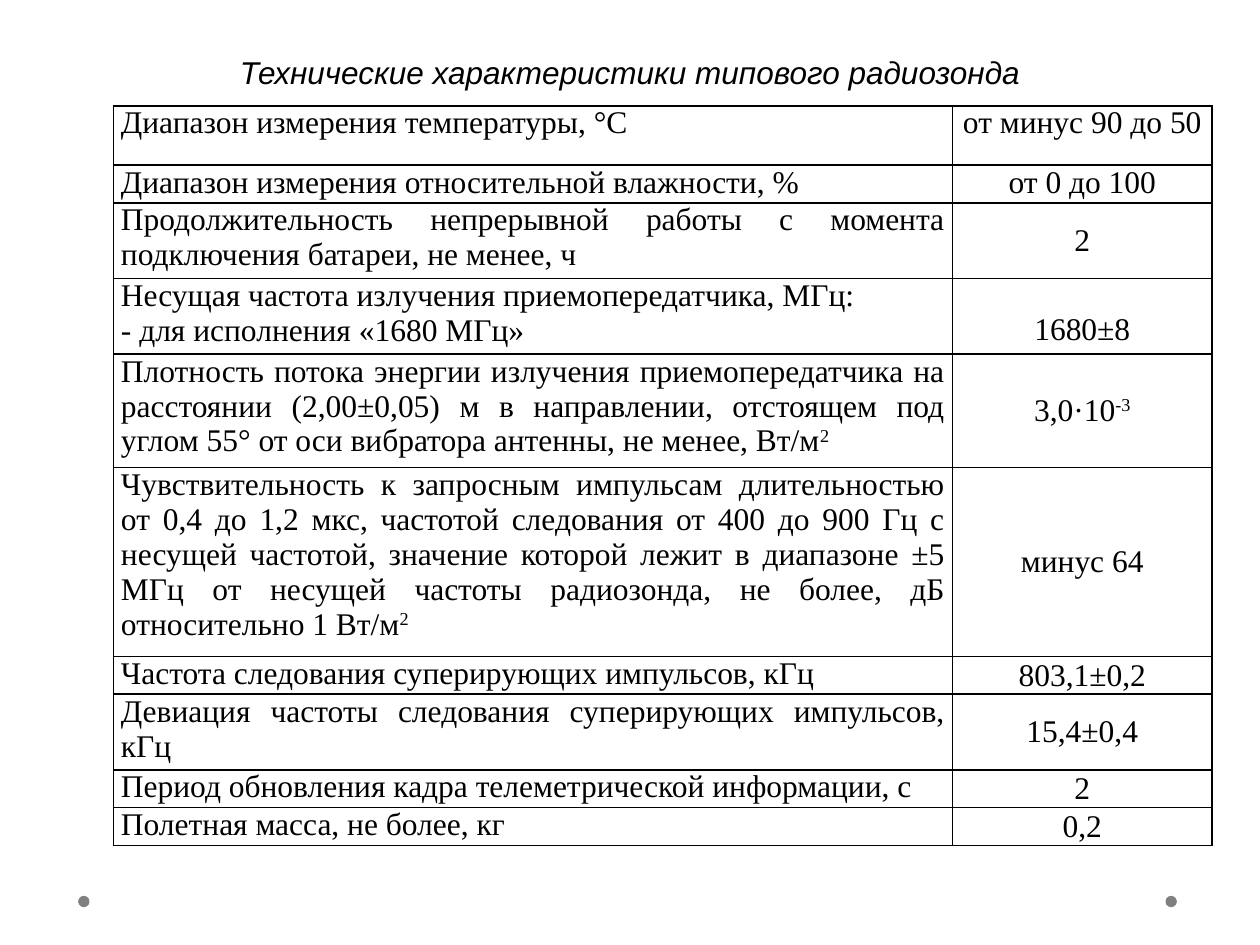
"""Build a slide with the technical characteristics of a radiosonde."""
from dataclasses import dataclass

from lxml.etree import SubElement
from pptx import Presentation
from pptx.dml.color import RGBColor
from pptx.enum.shapes import MSO_SHAPE
from pptx.enum.text import MSO_ANCHOR, PP_ALIGN
from pptx.oxml.ns import qn
from pptx.util import Inches, Pt


@dataclass(frozen=True)
class Theme:
    """Colours, fonts and sizes of the slide."""
    text: str = "000000"
    border: str = "000000"
    dot: str = "808080"
    title_font: str = "Arial"
    table_font: str = "Times New Roman"
    size: int = 18
    border_width: int = 1


class SlideBuilder:
    """Hold the theme and the current slide."""

    def __init__(self, prs, theme):
        self.theme = theme
        self.s = prs.slides.add_slide(prs.slide_layouts[5])

    def style(self, r, name, italic=False):
        """Format one run."""
        r.font.name = name
        r.font.size = Pt(self.theme.size)
        r.font.italic = italic
        r.font.color.rgb = RGBColor.from_string(self.theme.text)

    def title(self, text, x, y, w, h):
        """Place the slide title."""
        sp = self.s.shapes.title
        sp.left, sp.top, sp.width, sp.height = map(Inches, (x, y, w, h))
        tf = sp.text_frame
        tf.text = text
        tf.vertical_anchor = MSO_ANCHOR.TOP
        p = tf.paragraphs[0]
        p.alignment = PP_ALIGN.CENTER
        self.style(p.runs[0], self.theme.title_font, italic=True)

    def dot(self, x, y, d):
        """Draw a small round mark."""
        sp = self.s.shapes.add_shape(MSO_SHAPE.OVAL, *map(Inches, (x, y, d, d)))
        sp.shadow.inherit = False
        sp.fill.solid()
        sp.fill.fore_color.rgb = RGBColor.from_string(self.theme.dot)
        sp.line.fill.background()

    def borders(self, cell):
        """Draw all four cell borders."""
        tcPr = cell._tc.get_or_add_tcPr()
        for side in ("a:lnL", "a:lnR", "a:lnT", "a:lnB"):
            ln = SubElement(tcPr, qn(side), w=str(Pt(self.theme.border_width)))
            fill = SubElement(ln, qn("a:solidFill"))
            SubElement(fill, qn("a:srgbClr"), val=self.theme.border)

    def cell(self, cell, text, align, anchor):
        """Fill one cell; a caret starts a superscript."""
        cell.margin_left = cell.margin_right = Inches(0.06)
        cell.margin_top = cell.margin_bottom = 0
        cell.vertical_anchor = anchor
        if anchor == MSO_ANCHOR.BOTTOM:
            cell.margin_bottom = Inches(0.05)
        self.borders(cell)
        cell.fill.background()
        tf = cell.text_frame
        tf.text = text.replace("^", "")
        for p, line in zip(tf.paragraphs, text.split("\n")):
            p.alignment = align
            base, _, power = line.partition("^")
            p.runs[0].text = base
            if power:
                r = p.add_run()
                r.text = power
                r._r.get_or_add_rPr().set("baseline", "30000")
            for r in p.runs:
                self.style(r, self.theme.table_font)

    def table(self, rows, widths, x, y):
        """Add the table of characteristics and values."""
        height = sum(row[0] for row in rows)
        tbl = self.s.shapes.add_table(
            len(rows), len(widths),
            *map(Inches, (x, y, sum(widths), height))).table
        tbl.first_row = tbl.horz_banding = False
        for col, w in zip(tbl.columns, widths):
            col.width = Inches(w)
        for i, (h, label, value, anchor) in enumerate(rows):
            tbl.rows[i].height = Inches(h)
            self.cell(tbl.cell(i, 0), label, PP_ALIGN.JUSTIFY, MSO_ANCHOR.TOP)
            self.cell(tbl.cell(i, 1), value, PP_ALIGN.CENTER, anchor)


TOP, MIDDLE, BOTTOM = MSO_ANCHOR.TOP, MSO_ANCHOR.MIDDLE, MSO_ANCHOR.BOTTOM
ROWS = [
    (0.47, "Диапазон измерения температуры, °С", "от минус 90 до 50", TOP),
    (0.3, "Диапазон измерения относительной влажности, %", "от 0 до 100", TOP),
    (0.6, "Продолжительность непрерывной работы с момента подключения "
          "батареи, не менее, ч", "2", MIDDLE),
    (0.6, "Несущая частота излучения приемопередатчика, МГц:\n"
          "- для исполнения «1680 МГц»", "1680±8", BOTTOM),
    (0.9, "Плотность потока энергии излучения приемопередатчика на расстоянии "
          "(2,00±0,05) м в направлении, отстоящем под углом 55° от оси "
          "вибратора антенны, не менее, Вт/м^2", "3,0·10^-3", MIDDLE),
    (1.5, "Чувствительность к запросным импульсам длительностью от 0,4 до "
          "1,2 мкс, частотой следования от 400 до 900 Гц с несущей частотой, "
          "значение которой лежит в диапазоне ±5 МГц от несущей частоты "
          "радиозонда, не более, дБ относительно 1 Вт/м^2",
     "минус 64", MIDDLE),
    (0.3, "Частота следования суперирующих импульсов, кГц",
     "803,1±0,2", MIDDLE),
    (0.6, "Девиация частоты следования суперирующих импульсов, кГц",
     "15,4±0,4", MIDDLE),
    (0.3, "Период обновления кадра телеметрической информации, с",
     "2", MIDDLE),
    (0.3, "Полетная масса, не более, кг", "0,2", MIDDLE),
]


def main():
    """Build and save the slide."""
    prs = Presentation()
    prs.slide_width, prs.slide_height = Inches(10), Inches(7.5)
    b = SlideBuilder(prs, Theme())
    for x in (0.62, 9.25):
        b.dot(x, 7.11, 0.09)
    b.title("Технические характеристики типового радиозонда", 0.5, 0.37, 9, 0.45)
    b.table(ROWS, (6.66, 2.06), 0.9, 0.84)
    prs.save("out.pptx")


if __name__ == "__main__":
    main()
